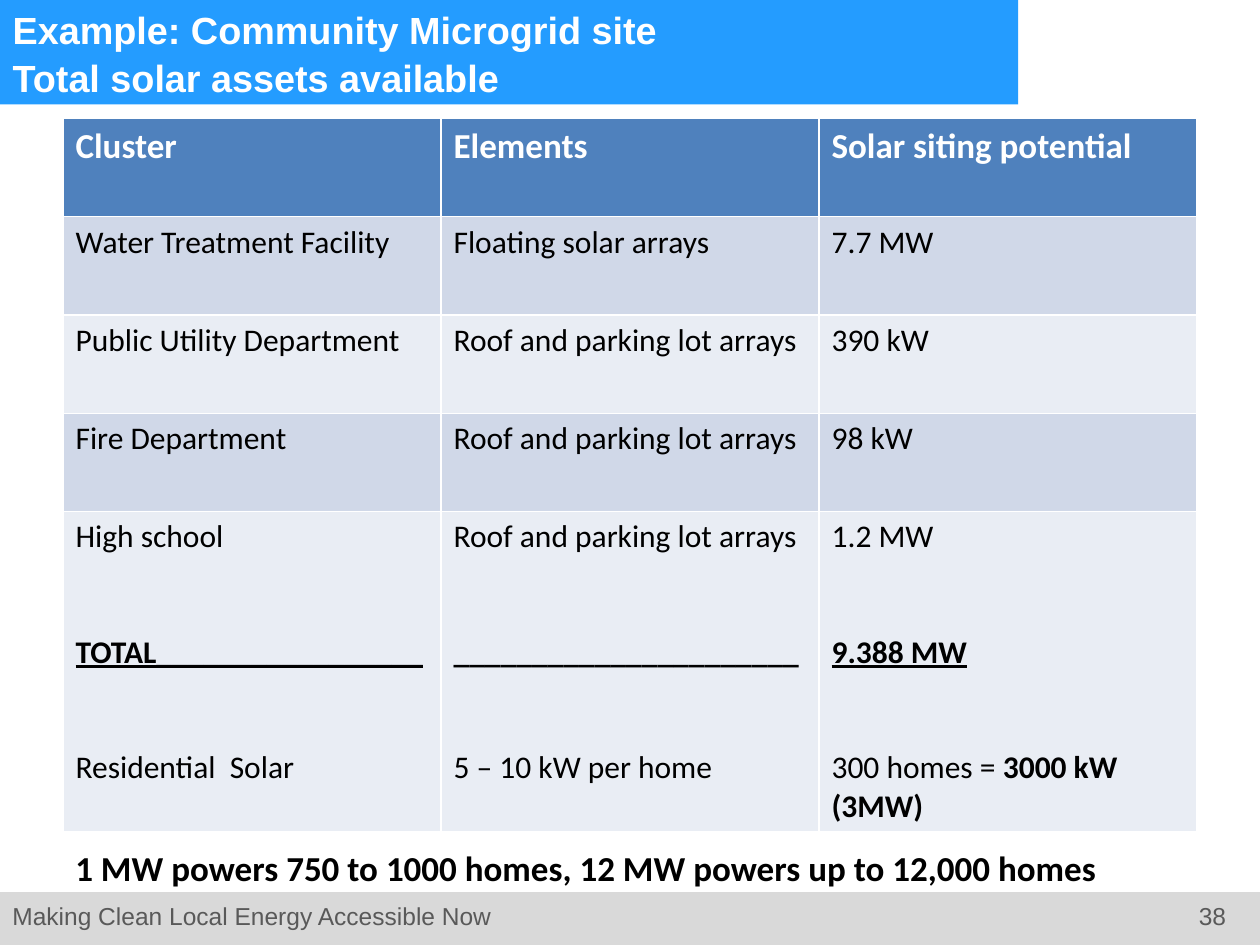
from pptx import Presentation
from pptx.dml.color import RGBColor
from pptx.enum.shapes import MSO_SHAPE
from pptx.enum.text import MSO_ANCHOR, PP_ALIGN
from pptx.util import Inches, Pt

WHITE = RGBColor(0xFF, 0xFF, 0xFF)
BLACK = RGBColor(0x00, 0x00, 0x00)
SKY = RGBColor(0x24, 0x9C, 0xFF)
LIGHT_GREY = RGBColor(0xD9, 0xD9, 0xD9)
DARK_GREY = RGBColor(0x59, 0x59, 0x59)
HEADER_BLUE = RGBColor(0x4F, 0x81, 0xBD)
BANDS = RGBColor(0xD0, 0xD8, 0xE8), RGBColor(0xE9, 0xED, 0xF4)

TITLE = {"name": "Arial", "size": Pt(21.6), "bold": True, "color": WHITE}
FOOTER = {"name": "Arial", "size": Pt(14), "color": DARK_GREY}
HEADER = {"name": "Calibri", "size": Pt(20), "bold": True, "color": WHITE}
BODY = {"name": "Calibri", "size": Pt(18), "bold": False, "color": BLACK}
STRONG = BODY | {"bold": True}
TOTAL = STRONG | {"underline": True}
NOTE = STRONG | {"size": Pt(20)}

MARGIN = 0.5
COLUMN_WIDTH = 3
ROW_HEIGHTS = [0.78] * 4 + [2.42]
GROUP_GAP = Pt(44)  # two body lines

HEADINGS = ["Cluster", "Elements", "Solar siting potential"]
SITES = [
    ["Water Treatment Facility", "Floating solar arrays", "7.7 MW"],
    ["Public Utility Department", "Roof and parking lot arrays", "390 kW"],
    ["Fire Department", "Roof and parking lot arrays", "98 kW"],
]
# Each cell of the last row: paragraphs made of (text, format) spans
SUMMARY = [
    [[("High school", BODY)],
     [("TOTAL_________________", TOTAL)],
     [("Residential  Solar", BODY)]],
    [[("Roof and parking lot arrays", BODY)],
     [("______________________", STRONG)],
     [("5 – 10 kW per home", BODY)]],
    [[("1.2 MW", BODY)],
     [("9.388 MW", TOTAL)],
     [("300 homes = ", BODY), ("3000 kW (3MW)", STRONG)]],
]


def set_font(font, style):
    for key, value in style.items():
        if key == "color":
            font.color.rgb = value
        else:
            setattr(font, key, value)


def write(frame, paragraphs, gap=None):
    """Fill a text frame with paragraphs of (text, format) spans."""
    for index, spans in enumerate(paragraphs):
        para = frame.add_paragraph() if index else frame.paragraphs[0]
        if index and gap:
            para.space_before = gap
        for text, style in spans:
            span = para.add_run()
            span.text = text
            set_font(span.font, style)


def add_bar(page, left, top, width, height, color):
    bar = page.shapes.add_shape(
        MSO_SHAPE.RECTANGLE, *map(Inches, (left, top, width, height)))
    bar.shadow.inherit = False
    bar.fill.solid()
    bar.fill.fore_color.rgb = color
    bar.line.fill.background()


def add_label(page, left, top, width, height, text, style, align=PP_ALIGN.LEFT):
    box = page.shapes.add_textbox(*map(Inches, (left, top, width, height)))
    frame = box.text_frame
    frame.word_wrap = True
    write(frame, [[(text, style)]])
    frame.paragraphs[0].alignment = align


def place_title(page, text):
    title = page.shapes.title
    title.left, title.top, title.width, title.height = map(
        Inches, (0, 0, 8, 0.83))
    title.element.getparent().append(title.element)  # in front of its bar
    frame = title.text_frame
    frame.word_wrap = True
    frame.vertical_anchor = MSO_ANCHOR.MIDDLE
    frame.text = text
    para = frame.paragraphs[0]
    para.alignment = PP_ALIGN.LEFT
    para.line_spacing = 1.06
    for span in para.runs:
        set_font(span.font, TITLE)


def add_assets_table(page):
    rows = [[[[(text, HEADER)]] for text in HEADINGS]]
    rows += [[[[(text, BODY)]] for text in site] for site in SITES]
    rows.append(SUMMARY)
    table = page.shapes.add_table(
        len(rows), len(HEADINGS), Inches(MARGIN), Inches(0.94),
        Inches(COLUMN_WIDTH * len(HEADINGS)), Inches(sum(ROW_HEIGHTS))).table
    for column in table.columns:
        column.width = Inches(COLUMN_WIDTH)
    for r, (cells, height) in enumerate(zip(rows, ROW_HEIGHTS)):
        table.rows[r].height = Inches(height)
        for c, paragraphs in enumerate(cells):
            cell = table.cell(r, c)
            cell.fill.solid()
            cell.fill.fore_color.rgb = BANDS[(r - 1) % 2] if r else HEADER_BLUE
            write(cell.text_frame, paragraphs, GROUP_GAP)


def main():
    deck = Presentation()
    deck.slide_width, deck.slide_height = Inches(10), Inches(7.5)
    page = deck.slides.add_slide(deck.slide_layouts[5])

    add_bar(page, 0, 7.08, 10, 0.42, LIGHT_GREY)
    add_label(page, 0, 7.1, 5.17, 0.34,
              "Making Clean Local Energy Accessible Now", FOOTER)
    add_label(page, 9.33, 7.1, 0.5, 0.4, "38", FOOTER, PP_ALIGN.RIGHT)
    add_bar(page, 0, 0, 8.08, 0.83, SKY)
    place_title(page, "Example: Community Microgrid site\vTotal solar assets available")
    add_assets_table(page)
    add_label(page, MARGIN, 6.67, 9, 0.44,
              "1 MW powers 750 to 1000 homes, 12 MW powers up to 12,000 homes",
              NOTE)
    deck.save("out.pptx")


if __name__ == "__main__":
    main()
